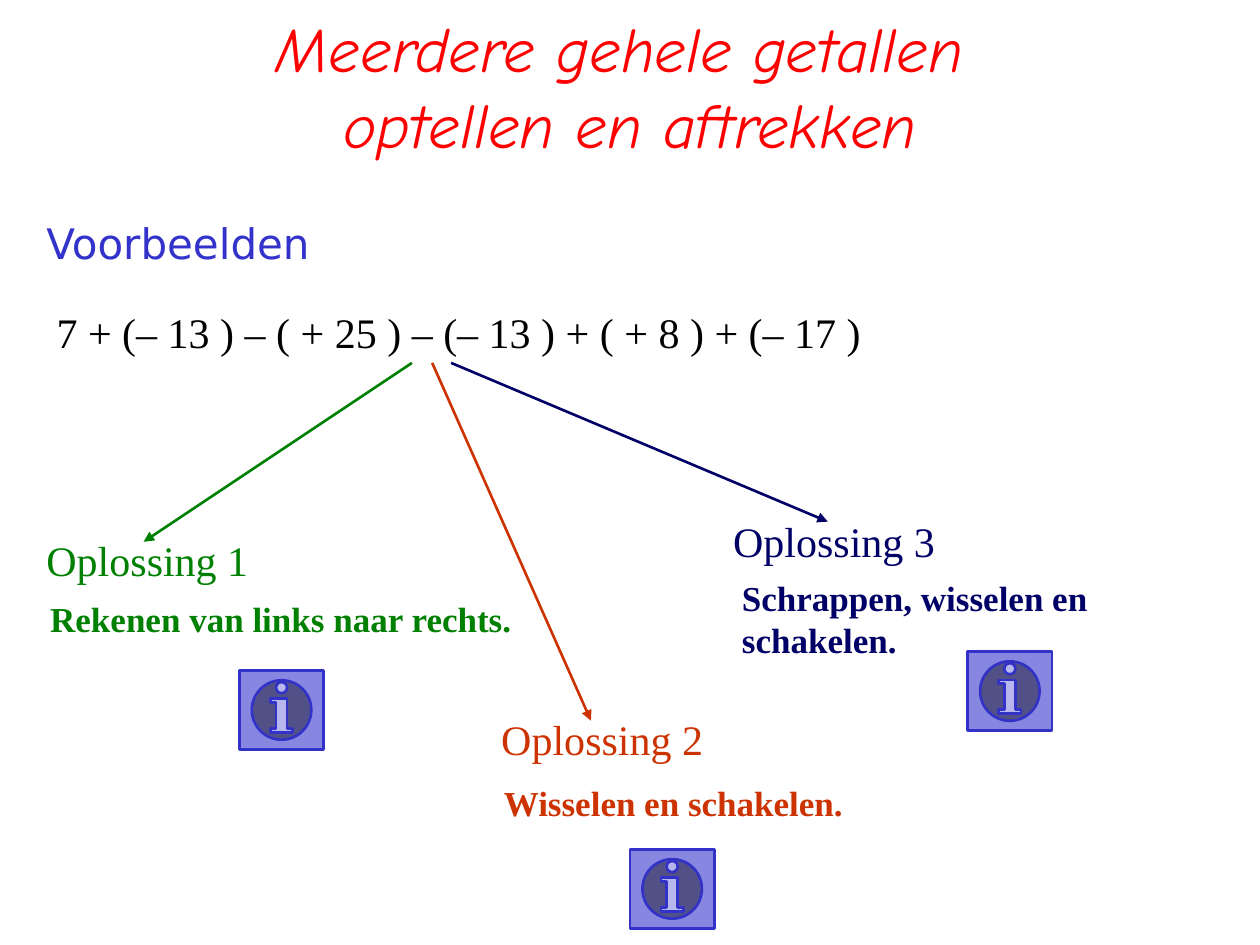
from pptx import Presentation
from pptx.dml.color import RGBColor
from pptx.enum.shapes import MSO_CONNECTOR as Link, MSO_SHAPE as Shape
from pptx.enum.text import MSO_ANCHOR as Anchor, PP_ALIGN as Align
from pptx.oxml.ns import qn
from pptx.util import Inches, Pt
from lxml.etree import SubElement

RED = RGBColor(0xFF, 0x00, 0x00)
BLUE = RGBColor(0x33, 0x33, 0xCC)
BLACK = RGBColor(0x00, 0x00, 0x00)
GREEN = RGBColor(0x00, 0x80, 0x00)
RUST = RGBColor(0xCC, 0x33, 0x00)
NAVY = RGBColor(0x00, 0x00, 0x66)
LILAC = RGBColor(0x87, 0x87, 0xE1)
EDGE = RGBColor(0x32, 0x32, 0xC8)

SOLUTIONS = [
    (GREEN, (3.27, 2.88), (1.14, 4.3), "Oplossing 1", (0.27, 4.19, 1.8, 0.5),
     "Rekenen van links naar rechts.", (0.3, 4.69, 3.86, 0.43), False, (1.9, 5.32)),
    (RUST, (3.43, 2.88), (4.69, 5.72), "Oplossing 2", (3.88, 5.61, 1.8, 0.5),
     "Wisselen en schakelen.", (3.9, 6.15, 2.89, 0.43), False, (5, 6.74)),
    (NAVY, (3.58, 2.88), (6.57, 4.14), "Oplossing 3", (5.72, 4.04, 1.8, 0.5),
     "Schrappen, wisselen en schakelen.", (5.79, 4.53, 3.5, 0.77), True, (7.68, 5.17)),
]


def write(frame, text, size=24, face="Times New Roman", color=BLACK,
          bold=False, italic=False, align=Align.LEFT):
    par = frame.paragraphs[0]
    par.text = text
    par.alignment = align
    for run in par.runs:
        font = run.font
        font.size, font.name = Pt(size), face
        font.bold, font.italic = bold, italic
        font.color.rgb = color


class Page:
    """Holds the shared style and the current slide."""

    weight = Pt(1.5)

    def __init__(self, slide):
        self.shapes = slide.shapes

    def text(self, box, words, wrap=False, anchor=Anchor.TOP, **style):
        frame = self.shapes.add_textbox(*map(Inches, box)).text_frame
        frame.word_wrap = wrap
        frame.vertical_anchor = anchor
        write(frame, words, **style)

    def arrow(self, start, end, color):
        line = self.shapes.add_connector(Link.STRAIGHT, *map(Inches, start + end))
        line.line.color.rgb = color
        line.line.width = self.weight
        SubElement(line.line._get_or_add_ln(), qn("a:tailEnd"), type="triangle")
        SubElement(line._element.spPr, qn("a:effectLst"))

    def button(self, spot):
        shape = self.shapes.add_shape(
            Shape.ACTION_BUTTON_INFORMATION, *map(Inches, spot + (0.67, 0.63)))
        shape.shadow.inherit = False
        shape.fill.solid()
        shape.fill.fore_color.rgb = LILAC
        shape.line.color.rgb = EDGE
        shape.line.width = self.weight


def main():
    deck = Presentation()
    deck.slide_width, deck.slide_height = Inches(10), Inches(7.5)
    page = Page(deck.slides.add_slide(deck.slide_layouts[6]))
    page.text((0.75, 0.05, 8.5, 1.25), "Meerdere gehele getallen \voptellen en aftrekken",
              wrap=True, anchor=Anchor.MIDDLE, size=36, face="Comic Neue",
              color=RED, italic=True, align=Align.CENTER)
    page.text((0.27, 1.68, 2.29, 0.5), "Voorbeelden", face="DejaVu Sans", color=BLUE)
    page.text((0.35, 2.38, 6.58, 0.5),
              "7 + (– 13 ) – ( + 25 ) – (– 13 ) + ( + 8 ) + (– 17 )")
    for color, start, end, name, box, hint, area, wrap, spot in SOLUTIONS:
        page.arrow(start, end, color)
        page.text(box, name, color=color)
        page.text(area, hint, wrap=wrap, size=20, color=color, bold=True)
        page.button(spot)
    deck.save("out.pptx")


if __name__ == "__main__":
    main()
